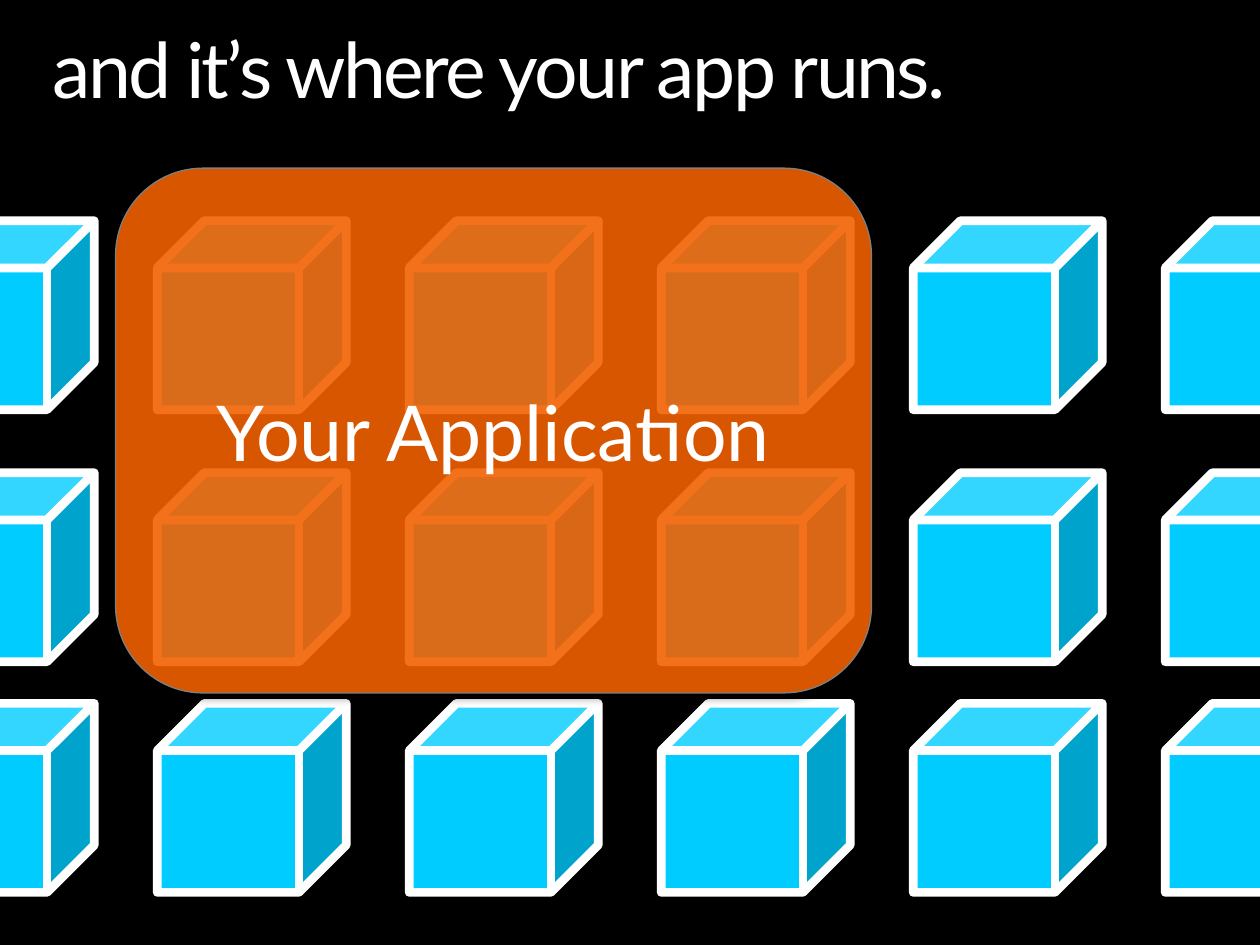
from lxml import etree
from pptx import Presentation
from pptx.dml.color import RGBColor
from pptx.enum.shapes import MSO_SHAPE
from pptx.enum.text import MSO_ANCHOR, PP_ALIGN
from pptx.oxml import parse_xml
from pptx.oxml.ns import nsdecls, qn
from pptx.util import Cm, Pt

CUBE, ROUNDED = MSO_SHAPE.CUBE, MSO_SHAPE.ROUNDED_RECTANGLE
MIDDLE, CENTER = MSO_ANCHOR.MIDDLE, PP_ALIGN.CENTER

BLACK = RGBColor(0x00, 0x00, 0x00)
WHITE = RGBColor(0xFF, 0xFF, 0xFF)
GRAY = RGBColor(0x80, 0x80, 0x80)
CYAN = RGBColor(0x00, 0xCC, 0xFF)
ORANGE = RGBColor(0xFF, 0x66, 0x00)

TITLE = "and it’s where your app runs."
APP_LABEL = "Your Application"
TEXT_FORMAT = {"name": "Lato", "size": Pt(44)}

# Lengths in centimetres
CUBE_SIZE = 3.81
FIRST_LEFT, COLUMN_STEP, COLUMN_COUNT = -1.91, 5.08, 6
ROW_TOPS = (4.45, 9.53, 14.18)
TITLE_AREA = (1.06, 0.64, 23.28, 1.86)
APP_AREA = (2.33, 3.39, 15.24, 10.58)


def add_shadow(shape):
    """Give the shape a soft shadow straight below it."""
    shape.shadow.inherit = False
    effects = shape._element.spPr.find(qn("a:effectLst"))
    effects.append(parse_xml(
        f'<a:outerShdw {nsdecls("a")} blurRad="{Pt(4)}" dist="{Pt(3)}" '
        'dir="5400000" rotWithShape="0"><a:srgbClr val="000000">'
        '<a:alpha val="35000"/></a:srgbClr></a:outerShdw>'))


def add_block(page, kind, area, fill, line, width):
    block = page.shapes.add_shape(kind, *map(Cm, area))
    block.fill.solid()
    block.fill.fore_color.rgb = fill
    block.line.color.rgb = line
    block.line.width = Pt(width)
    add_shadow(block)
    return block


def write(box, text):
    box.text_frame.word_wrap = True
    para = box.text_frame.paragraphs[0]
    span = para.add_run()
    span.text = text
    for name, value in TEXT_FORMAT.items():
        setattr(span.font, name, value)
    span.font.color.rgb = WHITE
    return para


deck = Presentation()
deck.slide_width, deck.slide_height = Cm(25.4), Cm(19.05)
page = deck.slides.add_slide(deck.slide_layouts[6])
page.background.fill.solid()
page.background.fill.fore_color.rgb = BLACK

title = page.shapes.add_textbox(*map(Cm, TITLE_AREA))
for side in ("left", "top", "right", "bottom"):
    setattr(title.text_frame, f"margin_{side}", 0)
title_para = write(title, TITLE)
title_para.line_spacing = 0.9
title_para.runs[0].font._element.set("spc", "-150")

for top in ROW_TOPS:
    for column in range(COLUMN_COUNT):
        left = FIRST_LEFT + column * COLUMN_STEP
        add_block(page, CUBE, (left, top, CUBE_SIZE, CUBE_SIZE), CYAN, WHITE, 5)

app = add_block(page, ROUNDED, APP_AREA, ORANGE, GRAY, 0.75)
app_color = app._element.spPr.find(qn("a:solidFill")).find(qn("a:srgbClr"))
etree.SubElement(app_color, qn("a:alpha")).set("val", "85000")
app.text_frame.vertical_anchor = MIDDLE
write(app, APP_LABEL).alignment = CENTER

deck.save("out.pptx")
